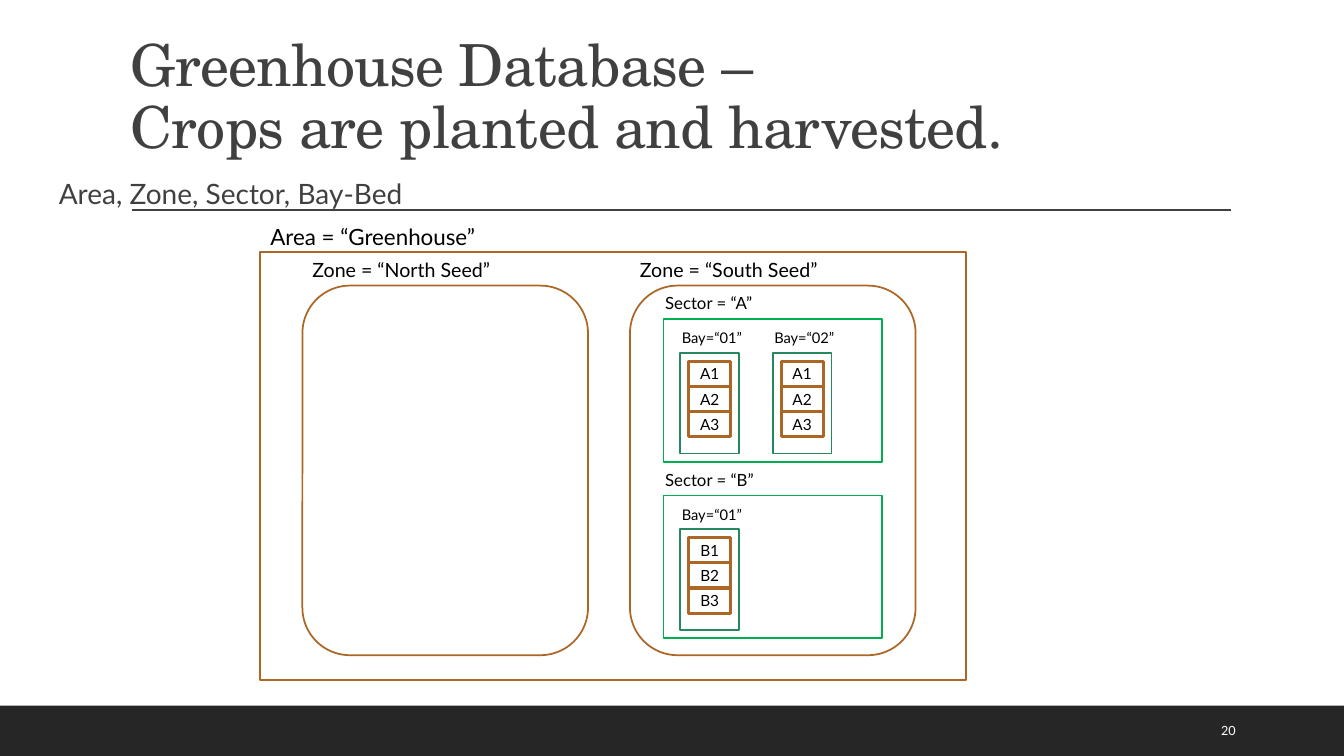
from dataclasses import dataclass
from typing import NamedTuple

from pptx import Presentation
from pptx.dml.color import RGBColor
from pptx.enum.shapes import MSO_CONNECTOR, MSO_SHAPE as Preset
from pptx.enum.text import MSO_ANCHOR as Anchor, PP_ALIGN as Align
from pptx.oxml.ns import qn
from pptx.util import Emu, Inches, Pt
from lxml.etree import SubElement

COLUMNS, ROWS = 160, 90
CELL = Inches(1) / 12


@dataclass(frozen=True)
class Theme:
    heading_font: str = "TeX Gyre Schola"
    body_font: str = "Lato"
    title: float = 41.4
    subtitle: float = 20
    area: float = 16
    zone: float = 14
    sector: float = 12
    bed: float = 11
    bay: float = 10.5
    page: float = 9
    ink: str = "404040"
    black: str = "000000"
    white: str = "FFFFFF"
    band: str = "262626"
    brown: str = "AC6726"
    green: str = "00B050"
    teal: str = "26885E"
    thin: float = 1
    outline: float = 1.25
    thick: float = 2.25


THEME = Theme()


class Box(NamedTuple):
    """Left, top, width and height in grid columns and rows."""
    left: float
    top: float
    width: float
    height: float


@dataclass(frozen=True)
class Level:
    """Look of one nesting level; the label box is placed from the frame's corner."""
    width: float
    height: float
    color: str
    label_size: float
    label_shift: float
    label_rise: float
    label_width: float
    label_height: float
    preset: Preset = Preset.RECTANGLE


AREA = Level(84, 51, THEME.brown, THEME.area, 0, 4, 37, 4.4)
ZONE = Level(34, 44, THEME.brown, THEME.zone, 0, 3.9, 37, 4.1, Preset.ROUNDED_RECTANGLE)
SECTOR = Level(26, 17, THEME.green, THEME.sector, -1, 3.7, 20, 3.6)
BAY = Level(7, 12, THEME.teal, THEME.bay, -1, 3.4, 12, 3.4)
BED_WIDTH, BED_HEIGHT, BED_INSET = 5, 3, 1


class Place(NamedTuple):
    level: Level
    left: float
    top: float
    label: str
    beds: tuple[str, ...] = ()


A_BEDS, B_BEDS = ("A1", "A2", "A3"), ("B1", "B2", "B3")
PLACES = (
    Place(AREA, 31, 30, "Area = “Greenhouse”"),
    Place(ZONE, 36, 34, "Zone = “North Seed”"),
    Place(ZONE, 75, 34, "Zone = “South Seed”"),
    Place(SECTOR, 79, 38, "Sector = “A”"),
    Place(SECTOR, 79, 59, "Sector = “B”"),
    Place(BAY, 81, 42, "Bay=“01”", A_BEDS),
    Place(BAY, 92, 42, "Bay=“02”", A_BEDS),
    Place(BAY, 81, 63, "Bay=“01”", B_BEDS),
)


def grid(cells: float) -> Emu:
    return Emu(round(cells * CELL))


def add_run(paragraph, text: str, size: float, color: str, font: str = THEME.body_font):
    run = paragraph.add_run()
    run.text = text
    run.font.size = Pt(size)
    run.font.name = font
    run.font.color.rgb = RGBColor.from_string(color)
    return run


def add_text_frame(slide, box: Box, anchor: Anchor = Anchor.TOP):
    frame = slide.shapes.add_textbox(*map(grid, box)).text_frame
    frame.word_wrap = True
    frame.vertical_anchor = anchor
    return frame


def add_outline(slide, box: Box, color: str, weight: float,
                preset: Preset = Preset.RECTANGLE):
    outline = slide.shapes.add_shape(preset, *map(grid, box))
    outline.shadow.inherit = False
    outline.fill.background()
    outline.line.color.rgb = RGBColor.from_string(color)
    outline.line.width = Pt(weight)
    return outline


def add_bed(slide, box: Box, name: str) -> None:
    frame = add_outline(slide, box, THEME.brown, THEME.thick).text_frame
    frame.margin_left = frame.margin_right = 0
    frame.vertical_anchor = Anchor.MIDDLE
    frame.paragraphs[0].alignment = Align.CENTER
    add_run(frame.paragraphs[0], name, THEME.bed, THEME.black)


def add_place(slide, place: Place) -> None:
    """Draw a frame, the label above it and any beds stacked inside."""
    level = place.level
    add_outline(slide, Box(place.left, place.top, level.width, level.height),
                level.color, THEME.outline, level.preset)
    label = add_text_frame(slide, Box(place.left + level.label_shift,
                                      place.top - level.label_rise,
                                      level.label_width, level.label_height))
    add_run(label.paragraphs[0], place.label, level.label_size, THEME.black)
    for row, name in enumerate(place.beds):
        add_bed(slide, Box(place.left + BED_INSET,
                           place.top + BED_INSET + row * BED_HEIGHT,
                           BED_WIDTH, BED_HEIGHT), name)


def add_backdrop(slide) -> None:
    """Draw the footer band and the rule under the heading."""
    band = slide.shapes.add_shape(Preset.RECTANGLE, *map(grid, Box(0, 84, COLUMNS, 6)))
    band.shadow.inherit = False
    band.fill.solid()
    band.fill.fore_color.rgb = RGBColor.from_string(THEME.band)
    band.line.fill.background()
    rule = slide.shapes.add_connector(MSO_CONNECTOR.STRAIGHT,
                                      *map(grid, (15.7, 25, 146.5, 25)))
    rule.line.color.rgb = RGBColor.from_string(THEME.ink)
    rule.line.width = Pt(THEME.thin)
    SubElement(rule._element.spPr, qn("a:effectLst"))


def add_heading(slide) -> None:
    title = add_text_frame(slide, Box(14.4, 3.7, 132, 16.1), Anchor.BOTTOM).paragraphs[0]
    title.line_spacing = 0.9
    for index, line in enumerate(("Greenhouse Database – ",
                                  "Crops are planted and harvested.")):
        if index:
            title.add_line_break()
        run = add_run(title, line, THEME.title, THEME.ink, THEME.heading_font)
        run.font._element.set("spc", "-50")

    body = add_text_frame(slide, Box(7, 20, 132, 49.3))
    body.margin_left = body.margin_right = 0
    subtitle = body.paragraphs[0]
    subtitle.line_spacing = 1.1
    subtitle.space_before, subtitle.space_after = Pt(12), Pt(2)
    add_run(subtitle, "Area, Zone, Sector, Bay-Bed", THEME.subtitle, THEME.ink)


def main() -> None:
    deck = Presentation()
    deck.slide_width, deck.slide_height = grid(COLUMNS), grid(ROWS)
    slide = deck.slides.add_slide(deck.slide_layouts[6])
    add_backdrop(slide)
    add_heading(slide)
    page = add_text_frame(slide, Box(144.2, 84.6, 10.2, 4.8), Anchor.MIDDLE)
    add_run(page.paragraphs[0], "20", THEME.page, THEME.white)
    for place in PLACES:
        add_place(slide, place)
    deck.save("out.pptx")


if __name__ == "__main__":
    main()
